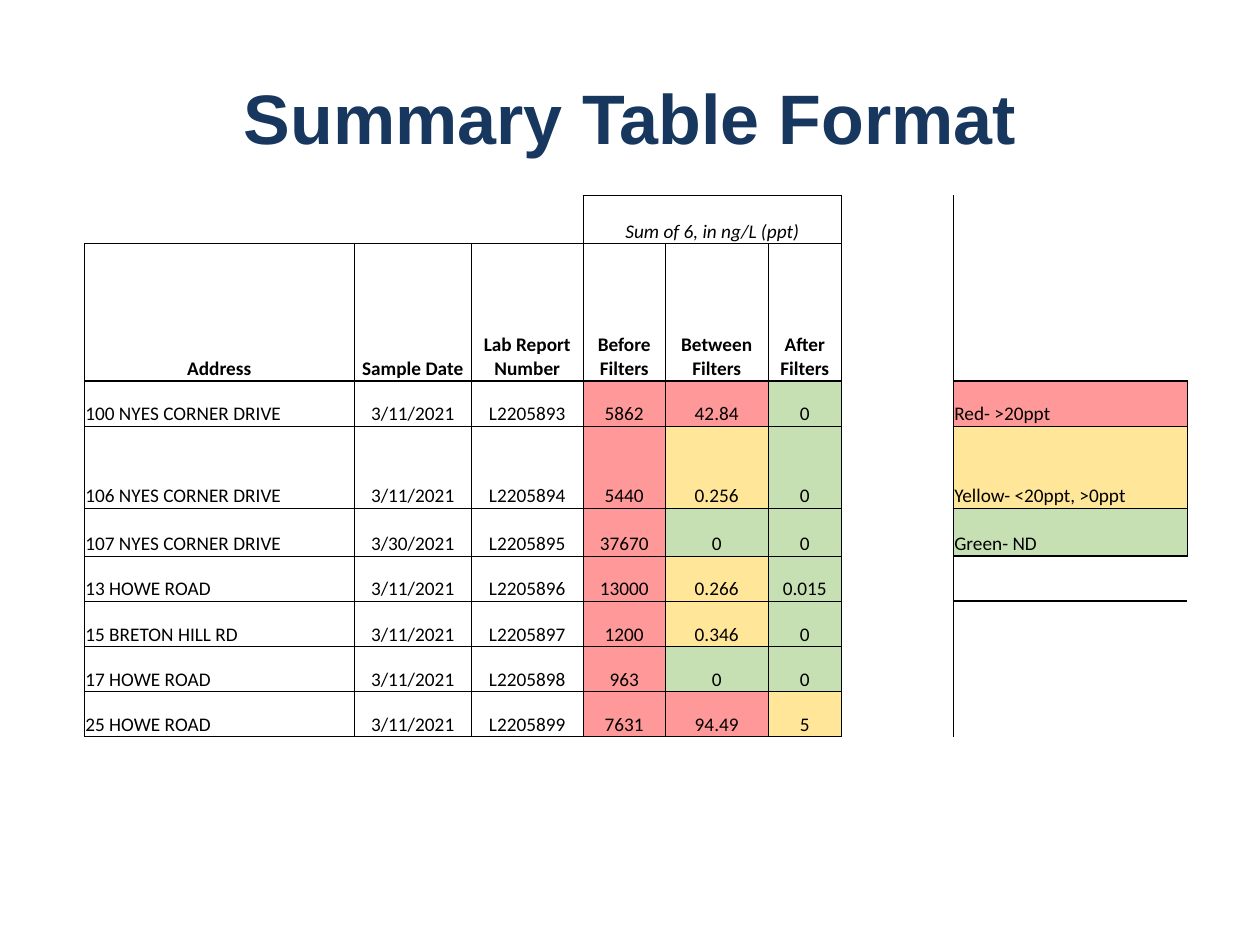
"""Build the summary table slide for filter sampling results."""
import pptx
import pptx.util
import pptx.dml.color
import pptx.enum.text
import pptx.oxml
import pptx.oxml.ns

Cm, Pt = pptx.util.Cm, pptx.util.Pt
CENTER = pptx.enum.text.PP_ALIGN.CENTER
LEFT = pptx.enum.text.PP_ALIGN.LEFT
FILLS = {"R": "FF9999", "Y": "FFE699", "G": "C6E0B4"}
HEADERS = ["Address", "Sample Date", "Lab Report Number",
           "Before Filters", "Between Filters", "After Filters"]
SAMPLES = [
    ("100 NYES CORNER DRIVE", "3/11/2021", "L2205893", "5862", "42.84", "0", "RRG"),
    ("106 NYES CORNER DRIVE", "3/11/2021", "L2205894", "5440", "0.256", "0", "RYG"),
    ("107 NYES CORNER DRIVE", "3/30/2021", "L2205895", "37670", "0", "0", "RGG"),
    ("13 HOWE ROAD", "3/11/2021", "L2205896", "13000", "0.266", "0.015", "RYG"),
    ("15 BRETON HILL RD", "3/11/2021", "L2205897", "1200", "0.346", "0", "RYG"),
    ("17 HOWE ROAD", "3/11/2021", "L2205898", "963", "0", "0", "RGG"),
    ("25 HOWE ROAD", "3/11/2021", "L2205899", "7631", "94.49", "5", "RRY"),
]
LEGEND = [("Red- >20ppt", "R"), ("Yellow- <20ppt, >0ppt", "Y"), ("Green- ND", "G")]
COL_WIDTHS = [5.44, 2.36, 2.26, 1.65, 2.08, 1.47, 2.26, 4.72]
ROW_HEIGHTS = [0.97, 2.77, 0.91, 1.65, 0.97, 0.91, 0.91, 0.91, 0.91]


def color(hex_value):
    return pptx.dml.color.RGBColor.from_string(hex_value)


def add_run(p, text, font, size, hex_value, bold=False, italic=False):
    r = p.add_run()
    r.text = text
    r.font.name = font
    r.font.size = Pt(size)
    r.font.bold = bold
    r.font.italic = italic
    r.font.color.rgb = color(hex_value)


prs = pptx.Presentation()
prs.slide_width, prs.slide_height = Cm(25.4), Cm(19.05)
s = prs.slides.add_slide(prs.slide_layouts[5])

title = s.shapes.title
title.left, title.top, title.width, title.height = Cm(1.27), Cm(0.76), Cm(22.86), Cm(3.18)
tf = title.text_frame
tf.vertical_anchor = pptx.enum.text.MSO_ANCHOR.MIDDLE
p = tf.paragraphs[0]
p.alignment = CENTER
add_run(p, "Summary Table Format", "Arial", 40, "17375E", bold=True)

frame = s.shapes.add_table(len(ROW_HEIGHTS), len(COL_WIDTHS), Cm(1.7), Cm(3.94),
                           Cm(sum(COL_WIDTHS)), Cm(sum(ROW_HEIGHTS)))
table = frame.table
table.first_row = table.horz_banding = False
table_style = table._tbl.tblPr.find(pptx.oxml.ns.qn("a:tableStyleId"))
table_style.text = "{2D5ABB26-0587-4C30-8999-92F81FD0307C}"
for column, width in zip(table.columns, COL_WIDTHS):
    column.width = Cm(width)
for row, height in zip(table.rows, ROW_HEIGHTS):
    row.height = Cm(height)
table.cell(0, 3).merge(table.cell(0, 5))

texts = {(0, 3): "Sum of 6, in ng/L (ppt)"}
fills = {}
for col, header in enumerate(HEADERS):
    texts[1, col] = header
for row, (*values, codes) in enumerate(SAMPLES, start=2):
    for col, value in enumerate(values):
        texts[row, col] = value
    for col, code in enumerate(codes, start=3):
        fills[row, col] = FILLS[code]
for row, (label, code) in enumerate(LEGEND, start=2):
    texts[row, 7] = label
    fills[row, 7] = FILLS[code]

blocks = [(2, 8, 0, 5, 0.5), (1, 1, 0, 5, 0.5), (2, 4, 7, 7, 1),
          (1, 1, 0, 2, 1), (1, 1, 3, 5, 1), (0, 0, 3, 5, 1)]
borders = {}
for top, bottom, left, right, outer in blocks:
    for row in range(top, bottom + 1):
        for col in range(left, right + 1):
            sides = [("L", "R", 0, -1, col == left), ("R", "L", 0, 1, col == right),
                     ("T", "B", -1, 0, row == top), ("B", "T", 1, 0, row == bottom)]
            for side, facing, down, across, is_outer in sides:
                width = outer if is_outer else 0.5
                borders[row, col, side] = width
                borders[row + down, col + across, facing] = width

for row in range(len(ROW_HEIGHTS)):
    for col in range(len(COL_WIDTHS)):
        cell = table.cell(row, col)
        cell.margin_left = cell.margin_right = cell.margin_top = Cm(0.02)
        cell.margin_bottom = 0
        cell.vertical_anchor = pptx.enum.text.MSO_ANCHOR.BOTTOM
        tcPr = cell._tc.get_or_add_tcPr()
        for side in "LRTB":
            if (row, col, side) in borders:
                tcPr.append(pptx.oxml.parse_xml(
                    f'<a:ln{side} {pptx.oxml.ns.nsdecls("a")} w="{Pt(borders[row, col, side])}">'
                    f'<a:solidFill><a:srgbClr val="000000"/></a:solidFill></a:ln{side}>'))
        if (row, col) in fills:
            cell.fill.solid()
            cell.fill.fore_color.rgb = color(fills[row, col])
        else:
            cell.fill.background()
        if (row, col) in texts:
            p = cell.text_frame.paragraphs[0]
            p.alignment = LEFT if row > 1 and col in (0, 7) else CENTER
            add_run(p, texts[row, col], "Calibri", 11, "000000", bold=row == 1, italic=row == 0)

prs.save("out.pptx")
